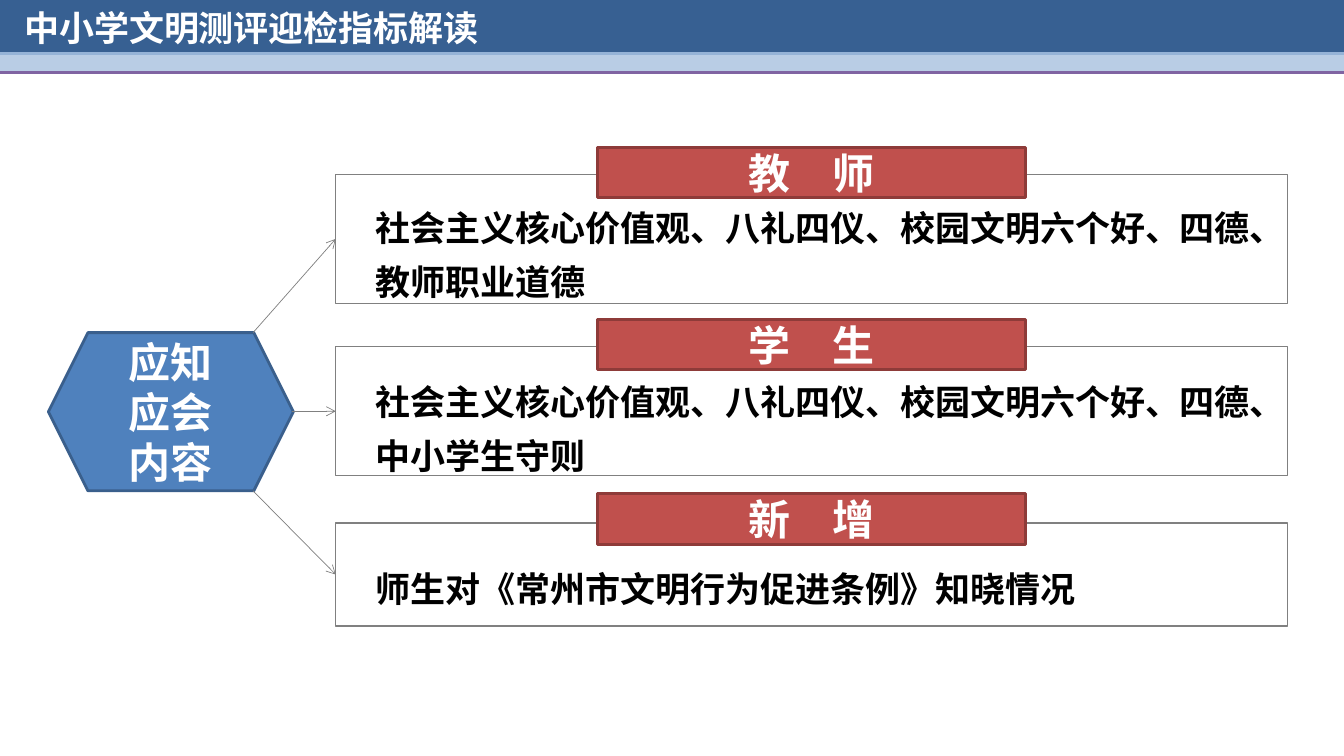
from pptx import Presentation
from pptx.dml.color import RGBColor
from pptx.enum.shapes import MSO_CONNECTOR, MSO_SHAPE
from pptx.enum.text import MSO_ANCHOR, MSO_AUTO_SIZE, PP_ALIGN
from pptx.oxml.ns import qn
from pptx.util import Inches, Pt
from lxml.etree import SubElement

FONT = "Noto Sans CJK SC"
COLORS = {
    "white": "FFFFFF", "black": "000000", "gray": "808080",
    "red": "C0504D", "dark_red": "8E3B39",
    "blue": "4F81BD", "dark_blue": "3A5F8C",
    "navy": "376092", "sky": "95B3D7", "pale": "B9CDE5", "purple": "8064A2",
}
TITLE = "中小学文明测评迎检指标解读"
HUB_LINES = ["应知", "应会", "内容"]
VALUES = "社会主义核心价值观、八礼四仪、校园文明六个好、四德、"

# Heading, content, panel top, panel height, heading top, content top, content size
SECTIONS = [
    ("教　师", VALUES + "教师职业道德", 1.73, 1.28, 1.46, 1.87, (9.01, 1.19)),
    ("学　生", VALUES + "中小学生守则", 3.44, 1.28, 3.17, 3.6, (9.01, 1.19)),
    ("新　增", "师生对《常州市文明行为促进条例》知晓情况",
     5.19, 1.02, 4.9, 5.46, (8.39, 0.65)),
]
# Where each arrow leaves the hexagon
ARROW_STARTS = [(2.51, 3.3), (2.9, 4.08), (2.51, 4.87)]


def color(name):
    return RGBColor.from_string(COLORS[name])


def write_lines(frame, lines, size, color_name, align=PP_ALIGN.LEFT, spacing=None):
    for index, line in enumerate(lines):
        para = frame.add_paragraph() if index else frame.paragraphs[0]
        para.alignment = align
        para.line_spacing = spacing
        span = para.add_run()
        span.text = line
        span.font.size = Pt(size)
        span.font.bold = True
        span.font.name = FONT
        span.font.color.rgb = color(color_name)
        east_asian = SubElement(span.font._element, qn("a:ea"))
        east_asian.set("typeface", FONT)


def add_box(slide, kind, place, fill, line, width, lines=()):
    box = slide.shapes.add_shape(kind, *map(Inches, place))
    box.shadow.inherit = False
    if fill:
        box.fill.solid()
        box.fill.fore_color.rgb = color(fill)
    else:
        box.fill.background()
    box.line.color.rgb = color(line)
    box.line.width = Pt(width)
    box.text_frame.vertical_anchor = MSO_ANCHOR.MIDDLE
    write_lines(box.text_frame, lines, 30, "white", PP_ALIGN.CENTER)
    return box


def add_content(slide, place, text):
    box = slide.shapes.add_textbox(*map(Inches, place))
    box.text_frame.word_wrap = True
    box.text_frame.auto_size = MSO_AUTO_SIZE.SHAPE_TO_FIT_TEXT
    write_lines(box.text_frame, [text], 25, "black", spacing=1.3)


def add_arrow(slide, start, panel):
    middle = panel.top + panel.height // 2
    arrow = slide.shapes.add_connector(
        MSO_CONNECTOR.STRAIGHT, *map(Inches, start), panel.left, middle)
    arrow.end_connect(panel, 1)
    arrow.line.color.rgb = color("gray")
    arrow.line.width = Pt(0.5)
    SubElement(arrow.line._get_or_add_ln(), qn("a:tailEnd")).set("type", "arrow")
    SubElement(arrow._element.spPr, qn("a:effectLst"))


def add_section(slide, section):
    heading, content, top, height, heading_top, content_top, size = section
    panel = add_box(slide, MSO_SHAPE.RECTANGLE, (3.33, top, 9.44, height),
                    None, "gray", 1)
    add_box(slide, MSO_SHAPE.RECTANGLE, (5.93, heading_top, 4.24, 0.5),
            "red", "dark_red", 2, [heading])
    add_content(slide, (3.63, content_top, *size), content)
    return panel


def add_header(slide):
    add_box(slide, MSO_SHAPE.RECTANGLE, (-0.03, 0.03, 13.37, 0.69),
            "pale", "purple", 2)
    add_box(slide, MSO_SHAPE.RECTANGLE, (-0.03, -0.02, 13.37, 0.55),
            "navy", "sky", 2)
    title = slide.shapes.title
    title.left, title.top, title.width, title.height = map(
        Inches, (0.14, 0.01, 4.73, 0.52))
    frame = title.text_frame
    frame.word_wrap = False
    frame.auto_size = MSO_AUTO_SIZE.NONE
    frame.vertical_anchor = MSO_ANCHOR.MIDDLE
    write_lines(frame, [TITLE], 25, "white")
    # Bring the title in front of the bands
    title.element.getparent().append(title.element)


def main():
    deck = Presentation()
    deck.slide_width, deck.slide_height = Inches(13.33), Inches(7.5)
    slide = deck.slides.add_slide(deck.slide_layouts[5])

    # Sections, hub and arrows
    panels = [add_section(slide, section) for section in SECTIONS]
    add_box(slide, MSO_SHAPE.HEXAGON, (0.48, 3.3, 2.43, 1.57),
            "blue", "dark_blue", 2, HUB_LINES)
    for start, panel in zip(ARROW_STARTS, panels):
        add_arrow(slide, start, panel)

    # Header bands and title
    add_header(slide)
    deck.save("out.pptx")


if __name__ == "__main__":
    main()
